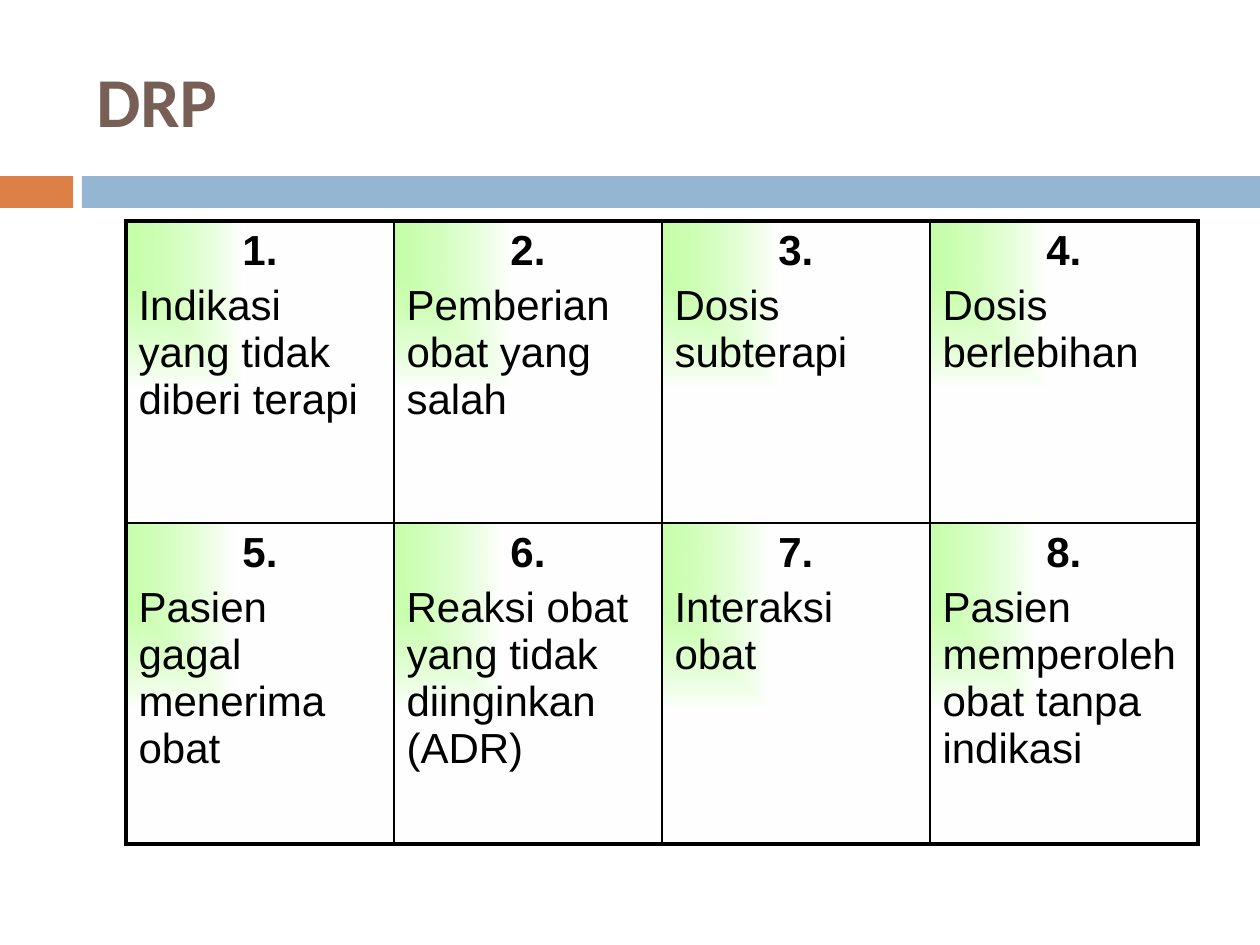
from lxml.etree import SubElement
from pptx import Presentation
from pptx.dml.color import RGBColor
from pptx.enum.shapes import MSO_SHAPE
from pptx.enum.text import MSO_ANCHOR, PP_ALIGN
from pptx.oxml.ns import qn
from pptx.util import Pt

PX = 914400 / 126
PROBLEMS = [
    ["Indikasi yang tidak diberi terapi", "Pemberian obat yang salah",
     "Dosis subterapi", "Dosis berlebihan"],
    ["Pasien gagal menerima obat", "Reaksi obat yang tidak diinginkan (ADR)",
     "Interaksi obat", "Pasien memperoleh obat tanpa indikasi"],
]


def px(length):
    return round(length * PX)


def color(value):
    return RGBColor.from_string(value)


def add_xml(parent, tag, **attributes):
    return SubElement(parent, qn(tag), {k: str(v) for k, v in attributes.items()})


class DrpSlide:
    """Style of the slide and methods that draw its elements."""

    ink, heading, glow = "000000", "775F55", "99FF66"
    thin, thick = Pt(1), Pt(2.25)

    def __init__(self, presentation):
        self.slide = presentation.slides.add_slide(presentation.slide_layouts[6])

    def style(self, paragraph, size, font, ink, bold):
        for run in paragraph.runs:
            run.font.size = Pt(size)
            run.font.name = font
            run.font.bold = bold
            run.font.color.rgb = color(ink)

    def band(self, left, top, width, height, fill):
        band = self.slide.shapes.add_shape(
            MSO_SHAPE.RECTANGLE, px(left), px(top), px(width), px(height))
        band.shadow.inherit = False
        band.fill.solid()
        band.fill.fore_color.rgb = color(fill)
        band.line.fill.background()

    def title(self, left, top, width, height, text):
        frame = self.slide.shapes.add_textbox(
            px(left), px(top), px(width), px(height)).text_frame
        frame.word_wrap = True
        frame.vertical_anchor = MSO_ANCHOR.MIDDLE
        frame.text = text
        self.style(frame.paragraphs[0], 40, "Calibri", self.heading, True)

    def border(self, properties, side, width):
        line = add_xml(properties, f"a:ln{side}", w=int(width))
        add_xml(add_xml(line, "a:solidFill"), "a:srgbClr", val=self.ink)

    def corner_glow(self, properties):
        gradient = add_xml(properties, "a:gradFill", rotWithShape=0)
        stops = add_xml(gradient, "a:gsLst")
        start = add_xml(add_xml(stops, "a:gs", pos=0), "a:srgbClr", val=self.glow)
        add_xml(start, "a:alpha", val=60000)
        add_xml(add_xml(stops, "a:gs", pos=100000), "a:srgbClr", val="FFFFFF")
        shade = add_xml(gradient, "a:path", path="rect")
        add_xml(shade, "a:fillToRect", r=100000, b=100000)

    def cell(self, cell, number, problem, outer_sides):
        cell.text_frame.text = f"{number}.\n{problem}"
        label, description = cell.text_frame.paragraphs
        label.alignment = PP_ALIGN.CENTER
        for paragraph in (label, description):
            paragraph.space_before = Pt(5)
            self.style(paragraph, 24, "Arial", self.ink, paragraph is label)
        properties = cell._tc.get_or_add_tcPr()
        for side in "LRTB":
            self.border(properties, side, self.thick if side in outer_sides else self.thin)
        self.corner_glow(properties)

    def table(self, left, top, column_width, row_heights, problems):
        rows, columns = len(problems), len(problems[0])
        table = self.slide.shapes.add_table(
            rows, columns, px(left), px(top),
            px(column_width * columns), px(sum(row_heights))).table
        table.first_row = table.horz_banding = False
        for column in table.columns:
            column.width = px(column_width)
        for r, row in enumerate(problems):
            table.rows[r].height = px(row_heights[r])
            for c, problem in enumerate(row):
                edges = {"L": c == 0, "R": c == columns - 1,
                         "T": r == 0, "B": r == rows - 1}
                outer_sides = [side for side, outer in edges.items() if outer]
                self.cell(table.cell(r, c), r * columns + c + 1, problem, outer_sides)


def main():
    presentation = Presentation()
    presentation.slide_width, presentation.slide_height = px(1260), px(945)
    drp = DrpSlide(presentation)
    drp.band(0, 176, 73, 32, "DD8047")
    drp.band(82, 176, 1178, 32, "94B6D2")
    drp.title(84, 32, 1124, 136, "DRP")
    drp.table(126, 221, 268, [302, 321], PROBLEMS)
    presentation.save("out.pptx")


if __name__ == "__main__":
    main()
